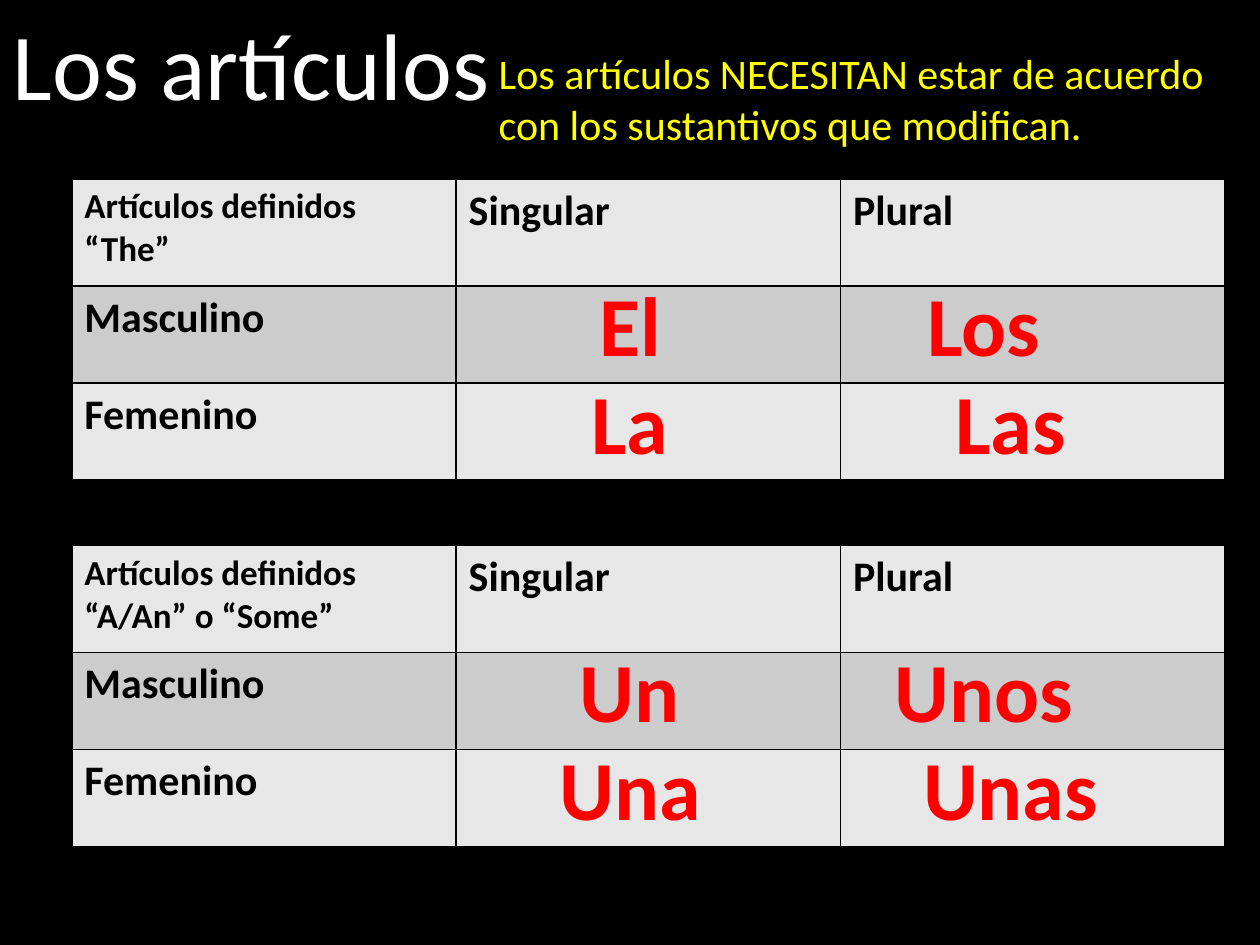
"""Build a slide on Spanish articles with two agreement tables."""
from dataclasses import dataclass

from lxml.etree import SubElement
from pptx import Presentation
from pptx.dml.color import RGBColor
from pptx.enum.text import MSO_ANCHOR, MSO_AUTO_SIZE, PP_ALIGN
from pptx.oxml.ns import qn
from pptx.slide import Slide
from pptx.table import _Cell
from pptx.text.text import TextFrame
from pptx.util import Inches, Pt

BLACK = RGBColor(0x00, 0x00, 0x00)
WHITE = RGBColor(0xFF, 0xFF, 0xFF)
YELLOW = RGBColor(0xFF, 0xFF, 0x00)
RED = RGBColor(0xFF, 0x00, 0x00)
LIGHT_BAND = RGBColor(0xE7, 0xE7, 0xE7)
DARK_BAND = RGBColor(0xCC, 0xCC, 0xCC)
FONT = "Calibri"

SLIDE_WIDTH, SLIDE_HEIGHT = Inches(10), Inches(7.5)
GRID_LEFT = Inches(0.57)
COLUMN_WIDTH = Inches(3.05)
ROW_HEIGHTS = [Inches(0.85), Inches(0.77), Inches(0.77)]
ANSWER_HEIGHT = Inches(0.91)
ANSWER_OFFSETS = [Inches(0.69), Inches(1.47)]
ANSWER_CENTERS = [[Inches(5), Inches(7.81)], [Inches(5), Inches(8.02)]]


@dataclass(frozen=True)
class Answer:
    """An article and the width of its box in inches."""
    word: str
    width: float


@dataclass(frozen=True)
class ArticleTable:
    """A table of one kind of article, with answers by gender and number."""
    heading: str
    top: float
    answers: list[list[Answer]]


ARTICLE_TABLES = [
    ArticleTable("Artículos definidos\n“The”", 1.42, [
        [Answer("El", 0.7), Answer("Los", 1.12)],
        [Answer("La", 0.82), Answer("Las", 1.09)],
    ]),
    ArticleTable("Artículos definidos\n“A/An” o “Some”", 4.33, [
        [Answer("Un", 1), Answer("Unos", 1.63)],
        [Answer("Una", 1.33), Answer("Unas", 1.6)],
    ]),
]


def write(frame: TextFrame, text: str, size: int, color: RGBColor,
          bold: bool = False, align: PP_ALIGN = PP_ALIGN.LEFT) -> None:
    """Set the text of a frame and format every run."""
    frame.text = text
    for paragraph in frame.paragraphs:
        paragraph.alignment = align
        for run in paragraph.runs:
            run.font.name = FONT
            run.font.size = Pt(size)
            run.font.bold = bold
            run.font.color.rgb = color


def add_borders(cell: _Cell) -> None:
    """Draw a thin black line on each side of a cell."""
    properties = cell._tc.get_or_add_tcPr()
    for side in ("a:lnL", "a:lnR", "a:lnT", "a:lnB"):
        line = SubElement(properties, qn(side), w=str(Pt(1)))
        fill = SubElement(line, qn("a:solidFill"))
        SubElement(fill, qn("a:srgbClr"), val=str(BLACK))


def add_answer(slide: Slide, answer: Answer, center: int, top: int) -> None:
    """Place a large red article around a centre line."""
    width = Inches(answer.width)
    frame = slide.shapes.add_textbox(
        center - width // 2, top, width, ANSWER_HEIGHT).text_frame
    frame.word_wrap = False
    frame.auto_size = MSO_AUTO_SIZE.SHAPE_TO_FIT_TEXT
    write(frame, answer.word, 48, RED, True, PP_ALIGN.CENTER)


def add_article_table(slide: Slide, article: ArticleTable) -> None:
    """Add a table with its labels and the answers over it."""
    rows = [[article.heading, "Singular", "Plural"],
            ["Masculino", "", ""],
            ["Femenino", "", ""]]
    top = Inches(article.top)
    table = slide.shapes.add_table(
        3, 3, GRID_LEFT, top, 3 * COLUMN_WIDTH, sum(ROW_HEIGHTS)).table
    for column in table.columns:
        column.width = COLUMN_WIDTH
    for r, labels in enumerate(rows):
        table.rows[r].height = ROW_HEIGHTS[r]
        for c, label in enumerate(labels):
            cell = table.cell(r, c)
            add_borders(cell)
            cell.fill.solid()
            cell.fill.fore_color.rgb = DARK_BAND if r % 2 else LIGHT_BAND
            if label:
                size = 20 if label == article.heading else 24
                write(cell.text_frame, label, size, BLACK, True)
    for answers, centers, offset in zip(
            article.answers, ANSWER_CENTERS, ANSWER_OFFSETS):
        for answer, center in zip(answers, centers):
            add_answer(slide, answer, center, top + offset)


def main() -> None:
    """Build and save the slide."""
    presentation = Presentation()
    presentation.slide_width = SLIDE_WIDTH
    presentation.slide_height = SLIDE_HEIGHT
    slide = presentation.slides.add_slide(presentation.slide_layouts[5])
    slide.background.fill.solid()
    slide.background.fill.fore_color.rgb = BLACK

    title = slide.shapes.title
    title.left, title.top = 0, 0
    title.width, title.height = Inches(4.42), Inches(1.01)
    title.text_frame.vertical_anchor = MSO_ANCHOR.TOP
    title.text_frame.auto_size = MSO_AUTO_SIZE.SHAPE_TO_FIT_TEXT
    write(title.text_frame, "Los artículos", 54, WHITE)

    for article in ARTICLE_TABLES:
        add_article_table(slide, article)

    rule_left = Inches(3.86)
    rule = slide.shapes.add_textbox(
        rule_left, Inches(0.33), SLIDE_WIDTH - rule_left, Inches(0.91)).text_frame
    rule.word_wrap = True
    rule.auto_size = MSO_AUTO_SIZE.SHAPE_TO_FIT_TEXT
    write(rule, "Los artículos NECESITAN estar de acuerdo con los "
          "sustantivos que modifican.", 24, YELLOW)

    presentation.save("out.pptx")


if __name__ == "__main__":
    main()
